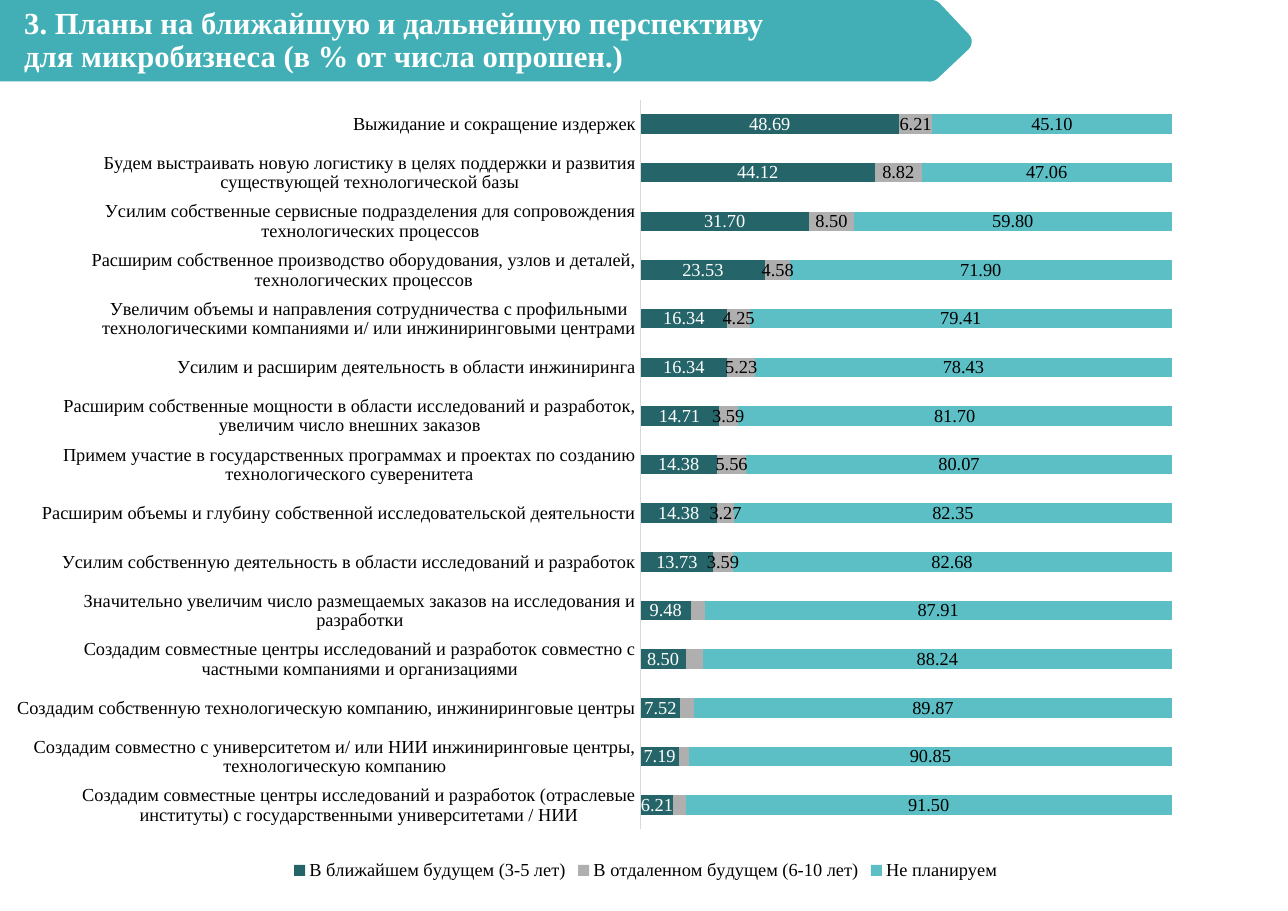
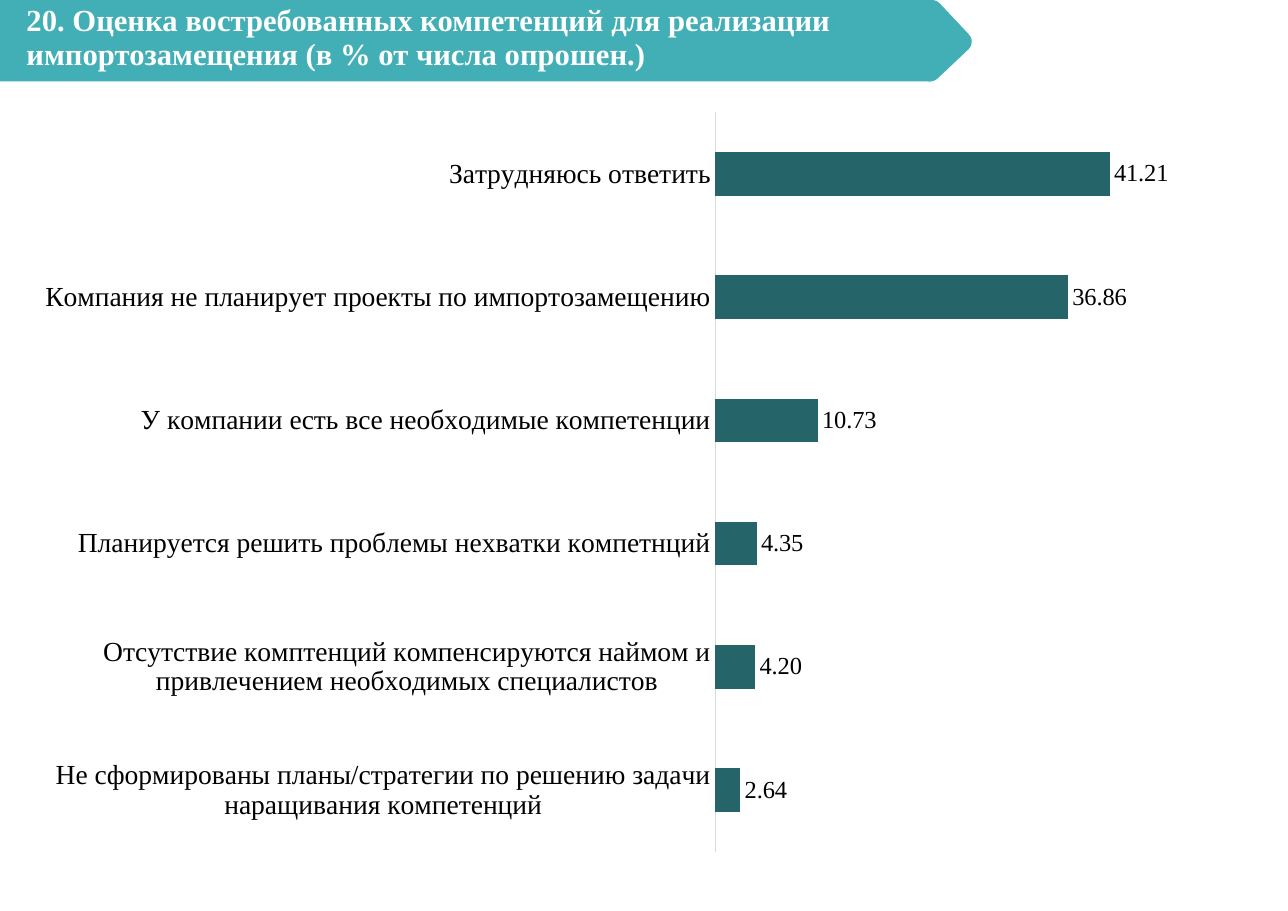
"""Build two survey slides with bar charts under a shared arrow-shaped title band."""
from lxml import etree
from pptx import Presentation
from pptx.chart.data import CategoryChartData
from pptx.dml.color import RGBColor
from pptx.enum.chart import XL_CHART_TYPE, XL_LABEL_POSITION, XL_LEGEND_POSITION, XL_TICK_MARK
from pptx.enum.shapes import MSO_SHAPE
from pptx.enum.text import MSO_ANCHOR, MSO_AUTO_SIZE, PP_ALIGN
from pptx.oxml.ns import qn
from pptx.util import Inches, Pt

RECT, ROUND_RECT = MSO_SHAPE.RECTANGLE, MSO_SHAPE.ROUNDED_RECTANGLE
STACKED, CLUSTERED = XL_CHART_TYPE.BAR_STACKED, XL_CHART_TYPE.BAR_CLUSTERED
CENTER, OUTSIDE = XL_LABEL_POSITION.CENTER, XL_LABEL_POSITION.OUTSIDE_END
BOTTOM, NO_TICK = XL_LEGEND_POSITION.BOTTOM, XL_TICK_MARK.NONE
LEFT, TOP, NO_FIT = PP_ALIGN.LEFT, MSO_ANCHOR.TOP, MSO_AUTO_SIZE.NONE

FONT = "Times New Roman"
TITLE_ONLY = 5
BAND = RGBColor(0x41, 0xAF, 0xB5)
DARK = RGBColor(0x25, 0x65, 0x69)
GREY = RGBColor(0xAF, 0xAF, 0xAF)
LIGHT = RGBColor(0x5B, 0xBF, 0xC5)
AXIS = RGBColor(0xD9, 0xD9, 0xD9)
WHITE = RGBColor(0xFF, 0xFF, 0xFF)
BLACK = RGBColor(0, 0, 0)

PLANS_TITLE = "3. Планы на ближайшую и дальнейшую перспективу\vдля микробизнеса (в % от числа опрошен.)"
PLANS = [
    ("Создадим совместные центры исследований и разработок (отраслевые институты) "
     "с государственными университетами / НИИ", 6.21, 2.29, 91.5),
    ("Создадим совместно с университетом и/ или НИИ инжиниринговые центры, "
     "технологическую компанию", 7.19, 1.96, 90.85),
    ("Создадим собственную технологическую компанию, инжиниринговые центры", 7.52, 2.61, 89.87),
    ("Создадим совместные центры исследований и разработок совместно "
     "с частными компаниями и организациями", 8.5, 3.27, 88.24),
    ("Значительно увеличим число размещаемых заказов на исследования и разработки", 9.48, 2.61, 87.91),
    ("Усилим собственную деятельность в области исследований и разработок", 13.73, 3.59, 82.68),
    ("Расширим объемы и глубину собственной исследовательской деятельности", 14.38, 3.27, 82.35),
    ("Примем участие в государственных программах и проектах по созданию "
     "технологического суверенитета", 14.38, 5.56, 80.07),
    ("Расширим собственные мощности в области исследований и разработок, "
     "увеличим число внешних заказов", 14.71, 3.59, 81.7),
    ("Усилим и расширим деятельность в области инжиниринга", 16.34, 5.23, 78.43),
    ("Увеличим объемы и направления сотрудничества с профильными "
     "технологическими компаниями и/ или инжиниринговыми центрами", 16.34, 4.25, 79.41),
    ("Расширим собственное производство оборудования, узлов и деталей, "
     "технологических процессов", 23.53, 4.58, 71.9),
    ("Усилим собственные сервисные подразделения для сопровождения "
     "технологических процессов", 31.7, 8.5, 59.8),
    ("Будем выстраивать новую логистику в целях поддержки и развития "
     "существующей технологической базы", 44.12, 8.82, 47.06),
    ("Выжидание и сокращение издержек", 48.69, 6.21, 45.1),
]
PLANS_SERIES = [
    ("В ближайшем будущем (3-5 лет)", DARK, WHITE),
    ("В отдаленном будущем (6-10 лет)", GREY, BLACK),
    ("Не планируем", LIGHT, BLACK),
]
SKILLS_TITLE = "20. Оценка востребованных компетенций для реализации импортозамещения (в % от числа опрошен.)"
SKILLS = [
    ("Не сформированы планы/стратегии по решению задачи наращивания компетенций", 2.64),
    ("Отсутствие комптенций компенсируются наймом и привлечением необходимых специалистов", 4.2),
    ("Планируется решить проблемы нехватки компетнций", 4.35),
    ("У компании есть все необходимые компетенции", 10.73),
    ("Компания не планирует проекты по импортозамещению", 36.86),
    ("Затрудняюсь ответить", 41.21),
]
SKILLS_SERIES = [("Series 1", DARK, BLACK)]


def set_attrs(obj, **values):
    """Set each named attribute on an object."""
    for name, value in values.items():
        setattr(obj, name, value)


def set_font(font, size, color=BLACK, bold=False):
    """Format a font in the deck's typeface."""
    set_attrs(font, name=FONT, size=Pt(size), bold=bold)
    font.color.rgb = color


def add_band(s, layout):
    """Draw the title band and move it behind the layout's placeholders."""
    parts = [(RECT, (0, 0, 8.45, 0.74), 0), (ROUND_RECT, (8.16, 0.08, 0.58, 0.58), 46.7)]
    for index, (kind, box, angle) in enumerate(parts):
        sp = s.shapes.add_shape(kind, *map(Inches, box))
        sp.rotation = angle
        sp.shadow.inherit = False
        sp.fill.solid()
        sp.fill.fore_color.rgb = BAND
        sp.line.fill.background()
        layout.shapes.element.insert(2 + index, sp.element)


def add_title(s, text, box):
    """Place and format the slide's title placeholder."""
    title = s.shapes.title
    set_attrs(title, **dict(zip(("left", "top", "width", "height"), map(Inches, box))))
    tf = title.text_frame
    tf.text = text
    set_attrs(tf, word_wrap=True, auto_size=NO_FIT, vertical_anchor=TOP)
    p = tf.paragraphs[0]
    set_attrs(p, alignment=LEFT, line_spacing=0.9)
    set_font(p.font, 20, WHITE, bold=True)


def set_plot_area(chart, box):
    """Fix the inner plot area as fractions of the chart."""
    area = chart.element.find(".//" + qn("c:plotArea"))
    for old in area.findall(qn("c:layout")):
        area.remove(old)
    layout = etree.Element(qn("c:layout"))
    area.insert(0, layout)
    manual = etree.SubElement(layout, qn("c:manualLayout"))
    values = [("layoutTarget", "inner"), ("xMode", "edge"), ("yMode", "edge"), *zip("xywh", box)]
    for tag, value in values:
        etree.SubElement(manual, qn("c:" + tag)).set("val", str(value))


def hide_labels(labels, count):
    """Delete the data labels of the first points of a series."""
    for index in range(count):
        label = etree.Element(qn("c:dLbl"))
        etree.SubElement(label, qn("c:idx")).set("val", str(index))
        etree.SubElement(label, qn("c:delete")).set("val", "1")
        labels._element.insert(index, label)


def add_bars(s, kind, box, rows, series, plot_box, gap, maximum, axis_size, label_size, position):
    """Add a horizontal bar chart with labelled series and a hidden value axis."""
    data = CategoryChartData(number_format="0.00")
    names, *columns = zip(*rows)
    data.categories = names
    for (name, _, _), column in zip(series, columns):
        data.add_series(name, column)
    chart = s.shapes.add_chart(kind, *map(Inches, box), data).chart
    set_attrs(chart, has_title=False, has_legend=False)
    set_font(chart.font, axis_size)
    set_plot_area(chart, plot_box)
    set_attrs(chart.value_axis, visible=False, has_major_gridlines=False,
              minimum_scale=0, maximum_scale=maximum)
    axis = chart.category_axis
    set_attrs(axis, major_tick_mark=NO_TICK, minor_tick_mark=NO_TICK)
    set_font(axis.tick_labels.font, axis_size)
    axis.format.line.color.rgb = AXIS
    axis.format.line.width = Pt(0.75)
    plot = chart.plots[0]
    set_attrs(plot, gap_width=gap, vary_by_categories=False)
    for bars, (_, color, label_color) in zip(plot.series, series):
        bars.format.fill.solid()
        bars.format.fill.fore_color.rgb = color
        labels = bars.data_labels
        set_attrs(labels, show_value=True, position=position,
                  number_format="0.00", number_format_is_linked=False)
        set_font(labels.font, label_size, label_color)
    return chart


def add_legend(chart, size):
    """Show the legend below the plot."""
    chart.has_legend = True
    set_attrs(chart.legend, position=BOTTOM, include_in_layout=False)
    set_font(chart.legend.font, size)


def main():
    """Build and save the deck."""
    prs = Presentation()
    set_attrs(prs, slide_width=Inches(11.69), slide_height=Inches(8.27))
    layout = prs.slide_layouts[TITLE_ONLY]

    s = prs.slides.add_slide(layout)
    add_band(s, layout)
    add_title(s, PLANS_TITLE, (0.12, 0.02, 9.97, 0.45))
    chart = add_bars(s, STACKED, (0.12, 0.79, 11.48, 7.24), PLANS, PLANS_SERIES,
                     plot_box=(0.496, 0.016, 0.504, 0.915), gap=150, maximum=120,
                     axis_size=12, label_size=12, position=CENTER)
    hide_labels(chart.plots[0].series[1].data_labels, 5)
    add_legend(chart, 12)

    s = prs.slides.add_slide(layout)
    add_title(s, SKILLS_TITLE, (0.14, 0, 9.64, 0.55))
    add_bars(s, CLUSTERED, (0.31, 0.88, 10.32, 7), SKILLS, SKILLS_SERIES,
             plot_box=(0.599, 0.02, 0.379, 0.959), gap=182, maximum=45,
             axis_size=18, label_size=16, position=OUTSIDE)
    prs.save("out.pptx")


if __name__ == "__main__":
    main()
